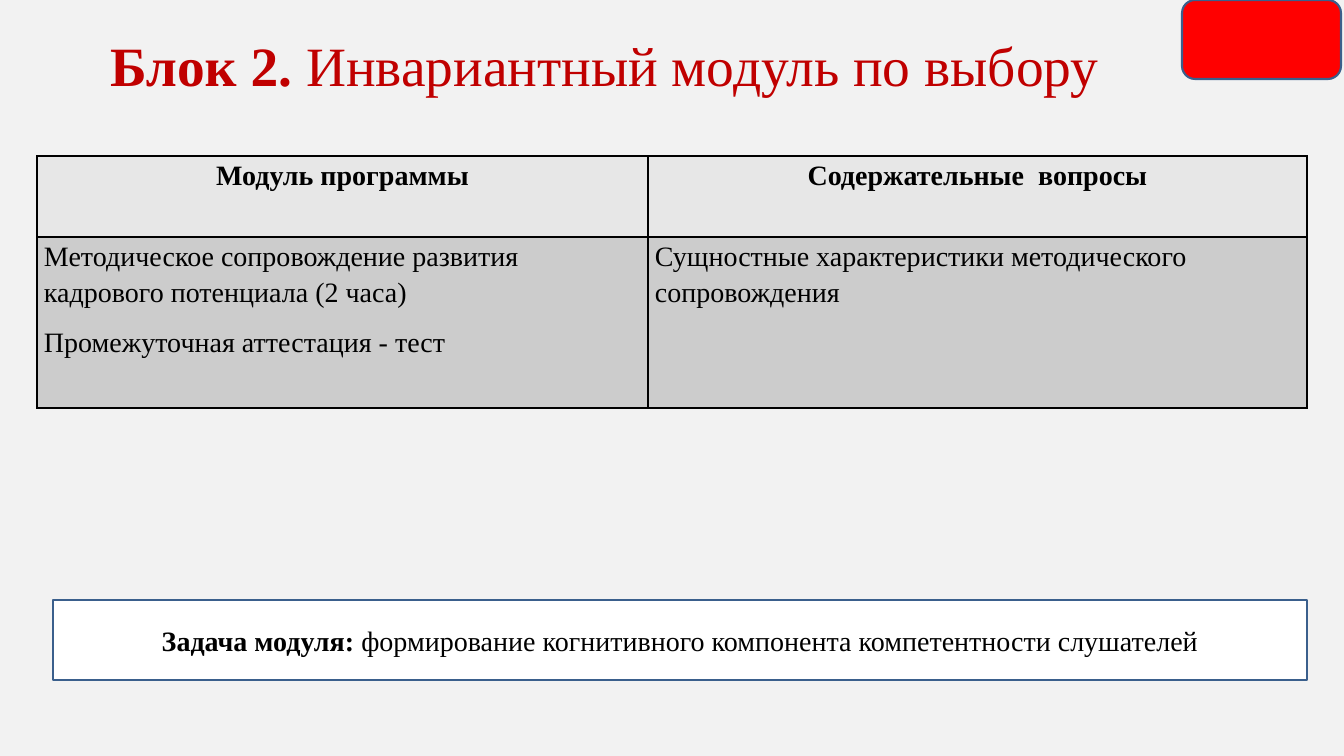
from lxml import etree
from pptx import Presentation
from pptx.dml.color import RGBColor
from pptx.enum.shapes import MSO_SHAPE
from pptx.enum.text import MSO_ANCHOR, MSO_AUTO_SIZE, PP_ALIGN
from pptx.oxml.ns import qn
from pptx.util import Pt

TITLE = [[("Блок 2.", True), (" Инвариантный модуль по выбору", False)]]
TASK = [[("Задача модуля: ", True),
         ("формирование когнитивного компонента компетентности слушателей", False)]]
ROWS = [
    [["Модуль программы"], ["Содержательные  вопросы"]],
    [["Методическое сопровождение развития кадрового потенциала (2 часа)",
      "Промежуточная аттестация - тест"],
     ["Сущностные характеристики методического сопровождения"]],
]

TITLE_BOX = (45, 36, 1119, 56)
BADGE_BOX = (1182, 0, 159, 79)
TASK_BOX = (53, 600, 1254, 80)
TABLE_AT = (37, 156)
COLS = [611, 659]
HEIGHTS = [81, 171]
PAD = 7

PAPER = RGBColor(0xF2, 0xF2, 0xF2)
CRIMSON = RGBColor(0xC0, 0x00, 0x00)
RED = RGBColor(0xFF, 0x00, 0x00)
BLUE = RGBColor(0x3A, 0x5F, 0x8C)
WHITE = RGBColor(0xFF, 0xFF, 0xFF)
BLACK = RGBColor(0x00, 0x00, 0x00)
FILLS = [RGBColor(0xE7, 0xE7, 0xE7), RGBColor(0xCC, 0xCC, 0xCC)]

FONT = "Times New Roman"
LEFT, CENTER = PP_ALIGN.LEFT, PP_ALIGN.CENTER
TOP, MIDDLE = MSO_ANCHOR.TOP, MSO_ANCHOR.MIDDLE
ROUND, RECT = MSO_SHAPE.ROUNDED_RECTANGLE, MSO_SHAPE.RECTANGLE
NO_FIT = MSO_AUTO_SIZE.NONE


def px(n):
    return round(n * 914400 / 100.8)


def write(frame, paras, size=20, color=BLACK, align=CENTER, line=1, after=0):
    for i, runs in enumerate(paras):
        para = frame.add_paragraph() if i else frame.paragraphs[0]
        para.alignment = align
        para.line_spacing = line
        para.space_before = Pt(0)
        para.space_after = Pt(after)
        for text, bold in runs:
            run = para.add_run()
            run.text = text
            run.font.name = FONT
            run.font.size = Pt(size)
            run.font.bold = bold
            run.font.color.rgb = color


def box(kind, place, fill):
    shape = slide.shapes.add_shape(kind, *map(px, place))
    shape.shadow.inherit = False
    shape.fill.solid()
    shape.fill.fore_color.rgb = fill
    shape.line.color.rgb = BLUE
    shape.line.width = Pt(1.5)
    return shape


def border(cell):
    props = cell._tc.get_or_add_tcPr()
    for side in ("lnL", "lnR", "lnT", "lnB"):
        line = etree.SubElement(props, qn("a:" + side), w=str(Pt(1)))
        fill = etree.SubElement(line, qn("a:solidFill"))
        etree.SubElement(fill, qn("a:srgbClr"), val=str(BLACK))


deck = Presentation()
deck.slide_width, deck.slide_height = px(1344), px(756)
slide = deck.slides.add_slide(deck.slide_layouts[5])
slide.background.fill.solid()
slide.background.fill.fore_color.rgb = PAPER

title = slide.shapes.title
title.left, title.top, title.width, title.height = map(px, TITLE_BOX)
title.text_frame.auto_size = NO_FIT
title.text_frame.vertical_anchor = MIDDLE
write(title.text_frame, TITLE, size=39.6, color=CRIMSON)

area = (*TABLE_AT, sum(COLS), sum(HEIGHTS))
table = slide.shapes.add_table(len(ROWS), len(COLS), *map(px, area)).table
for col, width in zip(table.columns, COLS):
    col.width = px(width)
for r, row in enumerate(ROWS):
    table.rows[r].height = px(HEIGHTS[r])
    head = r == 0
    for c, lines in enumerate(row):
        cell = table.cell(r, c)
        border(cell)
        cell.fill.solid()
        cell.fill.fore_color.rgb = FILLS[r]
        cell.margin_left = cell.margin_right = px(PAD)
        cell.margin_top = cell.margin_bottom = 0
        cell.vertical_anchor = TOP
        write(cell.text_frame, [[(text, head)] for text in lines],
              align=CENTER if head else LEFT, line=1.15, after=10)

box(ROUND, BADGE_BOX, RED)
task = box(RECT, TASK_BOX, WHITE).text_frame
task.word_wrap = True
task.vertical_anchor = MIDDLE
write(task, TASK)

deck.save("out.pptx")
